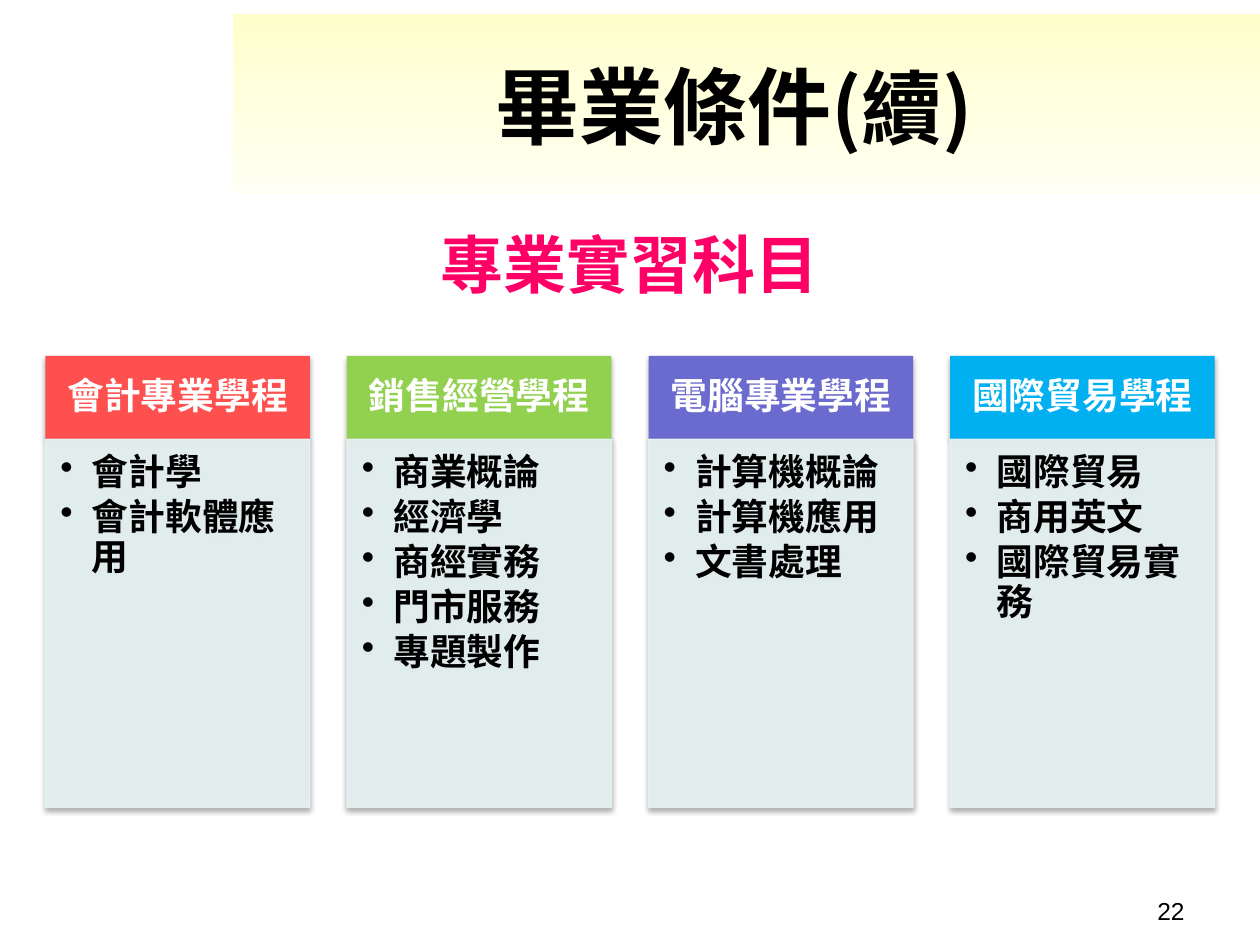
from lxml import etree
from pptx import Presentation
from pptx.dml.color import RGBColor
from pptx.enum.shapes import MSO_SHAPE
from pptx.enum.text import MSO_ANCHOR, PP_ALIGN
from pptx.oxml.ns import qn
from pptx.util import Pt

RECTANGLE = MSO_SHAPE.RECTANGLE
TOP, MIDDLE = MSO_ANCHOR.TOP, MSO_ANCHOR.MIDDLE
LEFT, CENTER, RIGHT = PP_ALIGN.LEFT, PP_ALIGN.CENTER, PP_ALIGN.RIGHT
CJK = "Noto Sans CJK SC"

PROGRAMS = [
    ("會計專業學程", "FF5050", ["會計學", "會計軟體應用"]),
    ("銷售經營學程", "92D050", ["商業概論", "經濟學", "商經實務", "門市服務", "專題製作"]),
    ("電腦專業學程", "6B6BCF", ["計算機概論", "計算機應用", "文書處理"]),
    ("國際貿易學程", "00B0F0", ["國際貿易", "商用英文", "國際貿易實務"]),
]
FIRST_LEFT, COLUMN_STEP, COLUMN_WIDTH = 25.9, 172.35, 151.2
HEADER_TOP, HEADER_HEIGHT, COURSES_HEIGHT = 203.4, 47.6, 210.4


def color(value):
    return RGBColor.from_string(value)


def add_element(parent, tag, **attributes):
    element = etree.SubElement(parent, qn(tag))
    for name, value in attributes.items():
        element.set(name, str(value))
    return element


def add_span(para, text, size, tint, font=CJK, bold=True):
    span = para.add_run()
    span.text = text
    span.font.size = Pt(size)
    span.font.bold = bold
    span.font.color.rgb = color(tint)
    span.font.name = font
    add_element(span.font._element, "a:ea", typeface=font)


def set_frame(box, anchor=TOP, insets=(7.2, 3.6, 7.2, 3.6)):
    frame = box.text_frame
    frame.word_wrap = True
    frame.vertical_anchor = anchor
    (frame.margin_left, frame.margin_top,
     frame.margin_right, frame.margin_bottom) = map(Pt, insets)
    return frame


def add_text(page, place, spans, align=CENTER, anchor=TOP):
    box = page.shapes.add_textbox(*map(Pt, place))
    para = set_frame(box, anchor).paragraphs[0]
    para.alignment = align
    for span in spans:
        add_span(para, *span)


def add_shadow(box):
    effects = box._element.spPr.find(qn("a:effectLst"))
    shadow = add_element(effects, "a:outerShdw", blurRad=Pt(3.1), dist=Pt(1.8),
                         dir=5400000, rotWithShape=0)
    black = add_element(shadow, "a:srgbClr", val="000000")
    add_element(black, "a:alpha", val=35000)


def add_rectangle(page, place, fill=None):
    box = page.shapes.add_shape(RECTANGLE, *map(Pt, place))
    box.shadow.inherit = False
    box.line.fill.background()
    if fill:
        box.fill.solid()
        box.fill.fore_color.rgb = color(fill)
    return box


def add_banner(page):
    box = add_rectangle(page, (133.2, 7.9, 586.8, 102.9))
    box.fill.gradient()
    box.fill.gradient_angle = 270
    for stop, tint in zip(box.fill.gradient_stops, ("FFFFCC", "FFFFF3")):
        stop.color.rgb = color(tint)


def add_header(page, left, name, fill):
    box = add_rectangle(page, (left, HEADER_TOP, COLUMN_WIDTH, HEADER_HEIGHT), fill)
    add_shadow(box)
    para = set_frame(box, MIDDLE, (11.5, 6.5, 11.5, 6.5)).paragraphs[0]
    para.alignment = CENTER
    para.line_spacing = 0.9
    add_span(para, name, 21, "FFFFFF")


def add_courses(page, left, courses):
    place = (left, HEADER_TOP + HEADER_HEIGHT, COLUMN_WIDTH, COURSES_HEIGHT)
    box = add_rectangle(page, place, "E7F3F4")
    box.line.color.rgb = color("E7F3F4")
    box.line.width = Pt(0.75)
    for tint in box._element.spPr.iter(qn("a:srgbClr")):
        add_element(tint, "a:alpha", val=90000)
    add_shadow(box)
    frame = set_frame(box, TOP, (8.6, 8.6, 11.5, 13))
    for index, course in enumerate(courses):
        para = frame.add_paragraph() if index else frame.paragraphs[0]
        para.alignment = LEFT
        para.line_spacing = 0.9
        para.space_after = Pt(3)
        properties = para._p.get_or_add_pPr()
        properties.set("marL", str(Pt(18)))
        properties.set("indent", str(Pt(-18)))
        add_element(properties, "a:buChar", char="•")
        add_span(para, course, 21, "000000")


def main():
    deck = Presentation()
    deck.slide_width, deck.slide_height = Pt(720), Pt(540)
    page = deck.slides.add_slide(deck.slide_layouts[6])
    add_banner(page)
    add_text(page, (133.2, 31.7, 572.4, 56.2),
             [("畢業條件", 48, "000000"), ("(續)", 46, "000000")], anchor=MIDDLE)
    for index, (name, fill, courses) in enumerate(PROGRAMS):
        left = FIRST_LEFT + index * COLUMN_STEP
        add_header(page, left, name, fill)
        add_courses(page, left, courses)
    add_text(page, (516.2, 508.3, 167.8, 28.1),
             [("22", 14, "000000", "Arial", False)], RIGHT)
    add_text(page, (25.2, 125.3, 668.9, 51.1), [("專業實習科目", 36, "FF0066")])
    deck.save("out.pptx")


if __name__ == "__main__":
    main()
